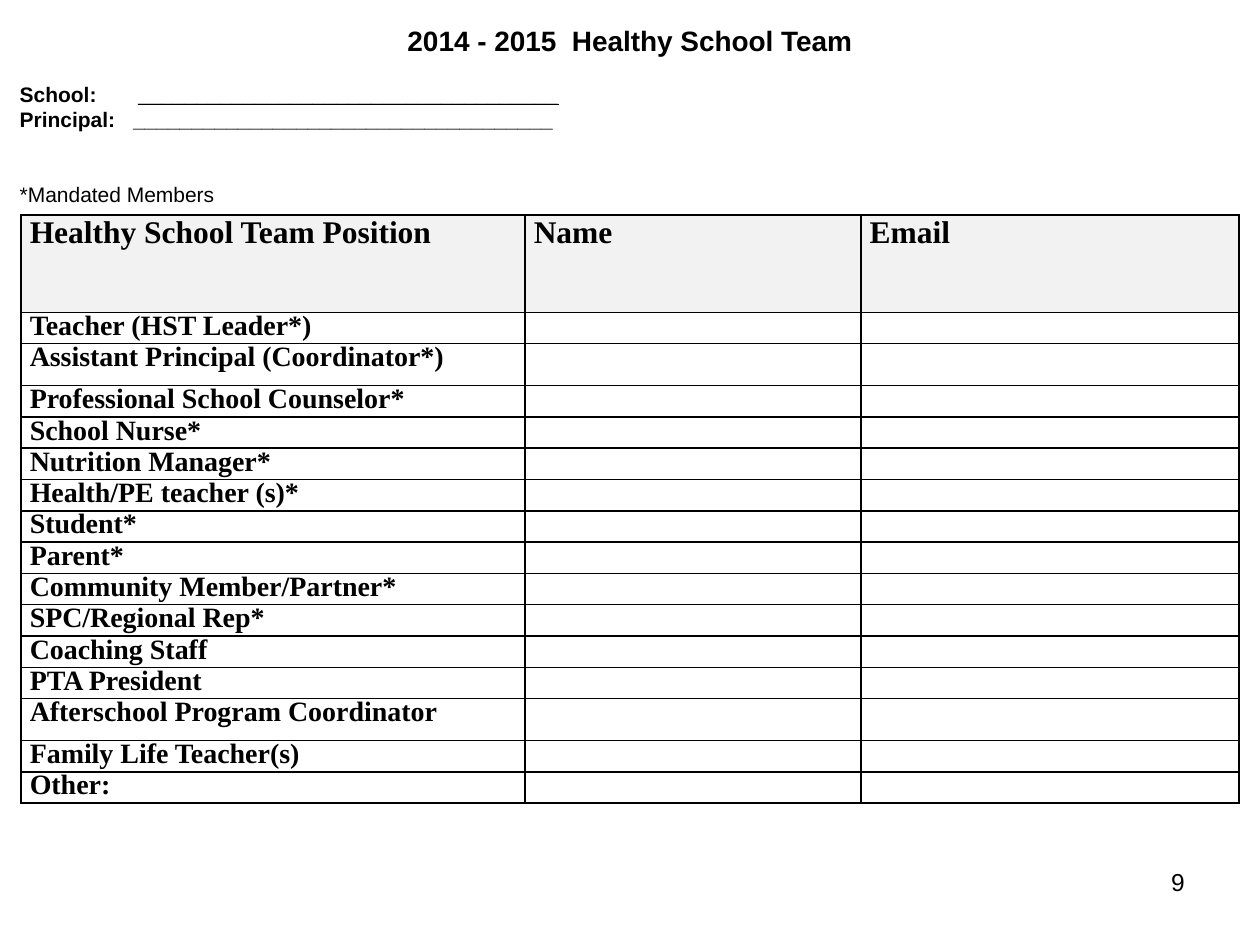
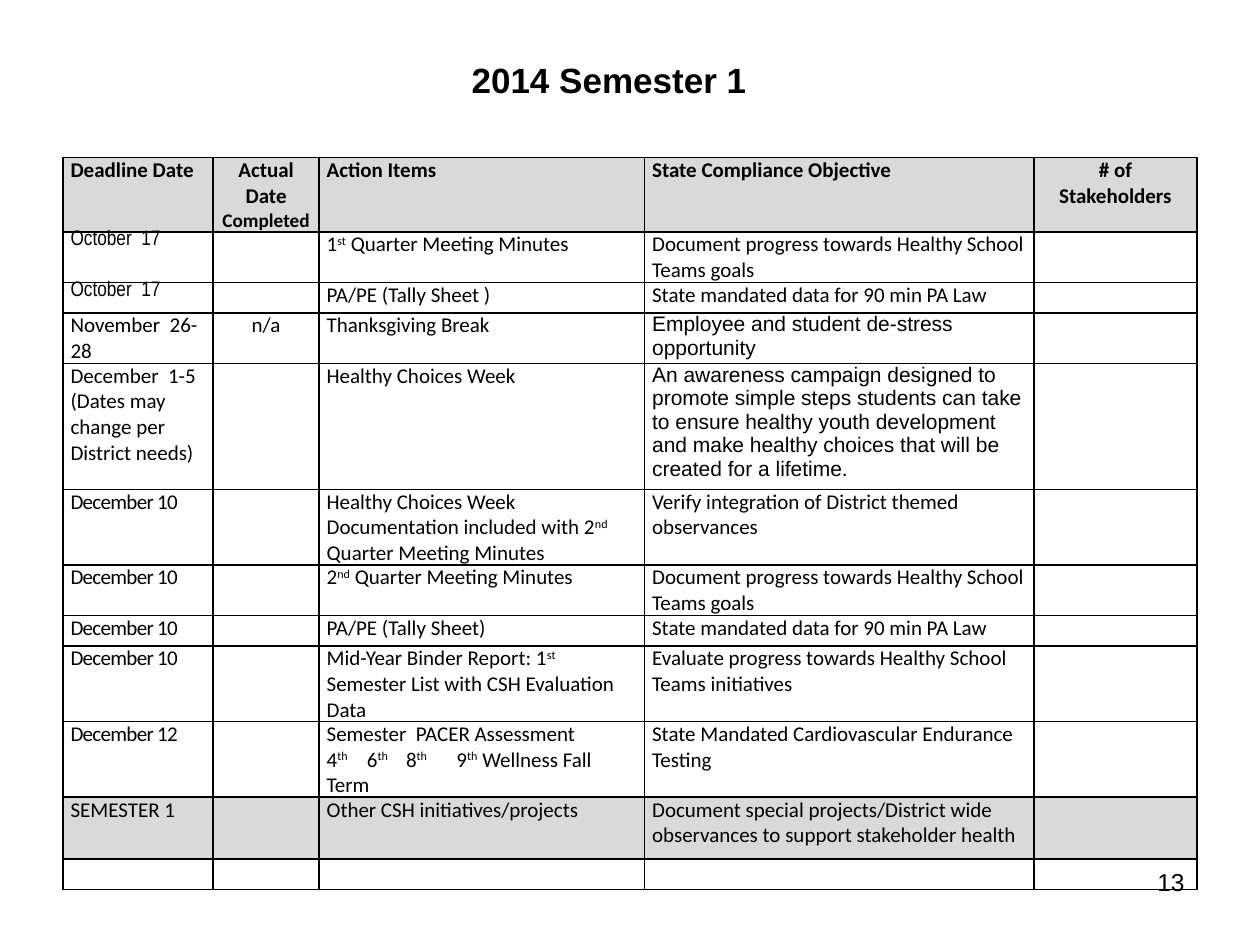
from dataclasses import dataclass, field

from lxml import etree
from pptx import Presentation
from pptx import util as u
from pptx.dml import color
from pptx.enum import text
from pptx.oxml import ns

COLOURS = {"ink": "000000", "light": "F2F2F2", "grey": "D9D9D9"}
GRID = u.Inches(1 / 12)  # the slide is 120 columns by 90 rows
CENTER, RIGHT = text.PP_ALIGN.CENTER, text.PP_ALIGN.RIGHT
TITLE = {"name": "Arial", "bold": True}
PAGE_NUMBER = {"name": "Arial", "size": u.Pt(14)}
PAGE_NUMBER_BOX = (86, 82, 28, 6.25)


@dataclass
class Line:
    """One paragraph; text between carets is superscript."""
    words: object  # a string, or a list of (string, format) pairs
    font: dict = field(default_factory=dict)
    layout: dict = field(default_factory=dict)
    tabs: tuple = ()


def units(count):
    return round(count * GRID)


def rgb(name):
    return color.RGBColor.from_string(COLOURS[name])


def set_all(target, values):
    for name, value in values.items():
        setattr(target, name, value)


# Text
def add_run(paragraph, words, values, attributes):
    run = paragraph.add_run()
    run.text = words
    set_all(run.font, values)
    run.font.color.rgb = rgb("ink")
    for name, value in attributes.items():
        run._r.get_or_add_rPr().set(name, value)


def write(text_frame, lines, base):
    for index, line in enumerate(lines):
        paragraph = text_frame.paragraphs[0] if index == 0 else text_frame.add_paragraph()
        set_all(paragraph, line.layout)
        if line.tabs:
            tab_list = etree.SubElement(paragraph._p.get_or_add_pPr(), ns.qn("a:tabLst"))
            for stop in line.tabs:
                etree.SubElement(tab_list, ns.qn("a:tab"), pos=str(u.Inches(stop)), algn="l")
        pieces = [(line.words, {})] if isinstance(line.words, str) else line.words
        for words, extra in pieces:
            values = {**base, **line.font, **extra}
            tracking = values.pop("tracking", None)
            attributes = {"spc": tracking} if tracking else {}
            for position, part in enumerate(words.split("^")):
                raised = {"baseline": "30000"} if position % 2 else {}
                if part:
                    add_run(paragraph, part, values, {**attributes, **raised})


def add_text(slide, box, lines, base, anchor=text.MSO_ANCHOR.TOP):
    shape = slide.shapes.add_textbox(*map(units, box))
    set_all(shape.text_frame, {"word_wrap": True, "vertical_anchor": anchor})
    write(shape.text_frame, lines, base)


def add_page_number(slide, number):
    add_text(slide, PAGE_NUMBER_BOX, [Line(str(number), layout={"alignment": RIGHT})], PAGE_NUMBER)


# Tables
def add_borders(cell):
    properties = cell._tc.get_or_add_tcPr()
    for index, side in enumerate(("lnL", "lnR", "lnT", "lnB")):
        border = etree.Element(ns.qn(f"a:{side}"), w=str(u.Pt(1)))
        fill = etree.SubElement(border, ns.qn("a:solidFill"))
        etree.SubElement(fill, ns.qn("a:srgbClr"), val=COLOURS["ink"])
        properties.insert(index, border)


def add_grid_table(slide, origin, columns, heights, rows, base, inset, shades):
    """rows holds lists of cells, each a string, a Line or a list of Lines."""
    frame = slide.shapes.add_table(len(heights), len(columns), *map(units, origin),
                                   units(sum(columns)), units(sum(heights)))
    table = frame.table
    set_all(table, {"first_row": False, "horz_banding": False})
    for column, width in zip(table.columns, columns):
        column.width = units(width)
    for index, (row, height, contents) in enumerate(zip(table.rows, heights, rows)):
        row.height = units(height)
        contents = list(contents) + [""] * (len(columns) - len(contents))
        for cell, content in zip(row.cells, contents):
            set_all(cell, {"margin_left": u.Inches(inset), "margin_right": u.Inches(inset),
                           "margin_top": 0, "margin_bottom": 0})
            if index in shades:
                cell.fill.solid()
                cell.fill.fore_color.rgb = rgb(shades[index])
            else:
                cell.fill.background()
            add_borders(cell)
            if content:
                lines = content if isinstance(content, list) else [content]
                write(cell.text_frame,
                      [Line(line) if isinstance(line, str) else line for line in lines], base)
            else:
                cell.text_frame.paragraphs[0].font.size = u.Pt(10)


# Team roster slide
POSITIONS = [
    "Teacher (HST Leader*)", "Assistant Principal (Coordinator*)",
    "Professional School Counselor*", "School Nurse*", "Nutrition Manager*",
    "Health/PE teacher (s)*", "Student*", "Parent*", "Community Member/Partner*",
    "SPC/Regional Rep*", "Coaching Staff", "PTA President",
    "Afterschool Program Coordinator", "Family Life Teacher(s)", "Other:",
]
TALL_POSITIONS = {"Assistant Principal (Coordinator*)", "Afterschool Program Coordinator"}


def add_roster_heading(slide, box):
    blank = "_" * 36
    lines = [
        Line("2014 - 2015  Healthy School Team", {"size": u.Pt(16)}, {"alignment": CENTER}),
        Line([("School:\t", {}), (blank, {"underline": True})],
             layout={"space_before": u.Pt(13.8)}, tabs=(0.94,)),
        Line("Principal:\t" + blank, tabs=(0.9,)),
        Line("*Mandated Members", {"bold": False}, {"space_before": u.Pt(28.5)}),
    ]
    add_text(slide, box, lines, {**TITLE, "size": u.Pt(12)}, text.MSO_ANCHOR.MIDDLE)


def build_roster(slide):
    add_page_number(slide, 9)
    header = [Line(words, {"size": u.Pt(18)})
              for words in ("Healthy School Team Position", "Name", "Email")]
    heights = [9.25] + [4 if position in TALL_POSITIONS else 2.97 for position in POSITIONS]
    members = [[Line(position, layout={"line_spacing": 0.93})] for position in POSITIONS]
    add_grid_table(slide, (2, 20.5), (48, 32, 36), heights, [header] + members,
                   {"name": "Times New Roman", "size": u.Pt(16), "bold": True},
                   0.07, {0: "light"})
    add_roster_heading(slide, (0.7, 1.5, 118.6, 19))


# Semester plan slide
def centered(words, **font):
    return Line(words, font, {"alignment": CENTER})


def october(words):
    return Line(words, {"name": "Arial Narrow"}, {"line_spacing": 0.88})


def december(day):
    return Line(f"December {day}", {"tracking": "-40"})


def arial(words):
    return Line(words, {"name": "Arial"})


PROGRESS = "Document progress towards Healthy School Teams goals"
PA_LAW = "State mandated data for 90 min PA Law"
BOLD = {"bold": True}
PLAN = [
    [Line("Deadline Date", BOLD),
     centered([("Actual Date ", {}), ("Completed", {"size": u.Pt(11)})], bold=True),
     Line("Action Items", BOLD), Line("State Compliance Objective", BOLD),
     centered("# of Stakeholders", bold=True)],
    [october("October  17"), "", "1^st^ Quarter Meeting Minutes", PROGRESS],
    [october("October  17"), "", "PA/PE (Tally Sheet )", PA_LAW],
    ["November  26-28", centered("n/a"), "Thanksgiving Break",
     arial("Employee and student de-stress opportunity")],
    [["December  1-5", "(Dates may change per District needs)"], "", "Healthy Choices Week",
     arial("An awareness campaign designed to promote simple steps students can take to "
           "ensure healthy youth development and make healthy choices that will be "
           "created for a lifetime.")],
    [december(10), "",
     "Healthy Choices Week Documentation included with 2^nd^ Quarter Meeting Minutes",
     "Verify integration of District themed observances"],
    [december(10), "", "2^nd^ Quarter Meeting Minutes", PROGRESS],
    [december(10), "", "PA/PE (Tally Sheet)", PA_LAW],
    [december(10), "", "Mid-Year Binder Report: 1^st^ Semester List with CSH Evaluation Data",
     "Evaluate progress towards Healthy School Teams initiatives"],
    [december(12), "",
     ["Semester  PACER Assessment",
      Line("4^th^\t6^th^\t8^th^\t9^th^ Wellness Fall Term", tabs=(0.32, 0.63, 1.03))],
     "State Mandated Cardiovascular Endurance Testing"],
    ["SEMESTER 1", "", "Other CSH initiatives/projects",
     "Document special projects/District wide observances to support stakeholder health"],
    [],
]
PLAN_HEIGHTS = (7.1, 4.8, 2.9, 4.8, 12, 7.2, 4.8, 2.9, 7.2, 7.2, 5.9, 2.9)


def build_plan(slide):
    add_page_number(slide, 13)
    add_grid_table(slide, (6, 15), (14.3, 10.1, 31, 37.1, 15.5), PLAN_HEIGHTS, PLAN,
                   {"name": "Calibri", "size": u.Pt(12), "bold": False},
                   0.06, {0: "grey", 10: "grey"})
    add_text(slide, (21, 5, 74, 5.25), [centered("2014 Semester 1", size=u.Pt(20))], TITLE)


def main():
    presentation = Presentation()
    set_all(presentation, {"slide_width": units(120), "slide_height": units(90)})
    for build in (build_roster, build_plan):
        build(presentation.slides.add_slide(presentation.slide_layouts[6]))
    presentation.save("out.pptx")


if __name__ == "__main__":
    main()
